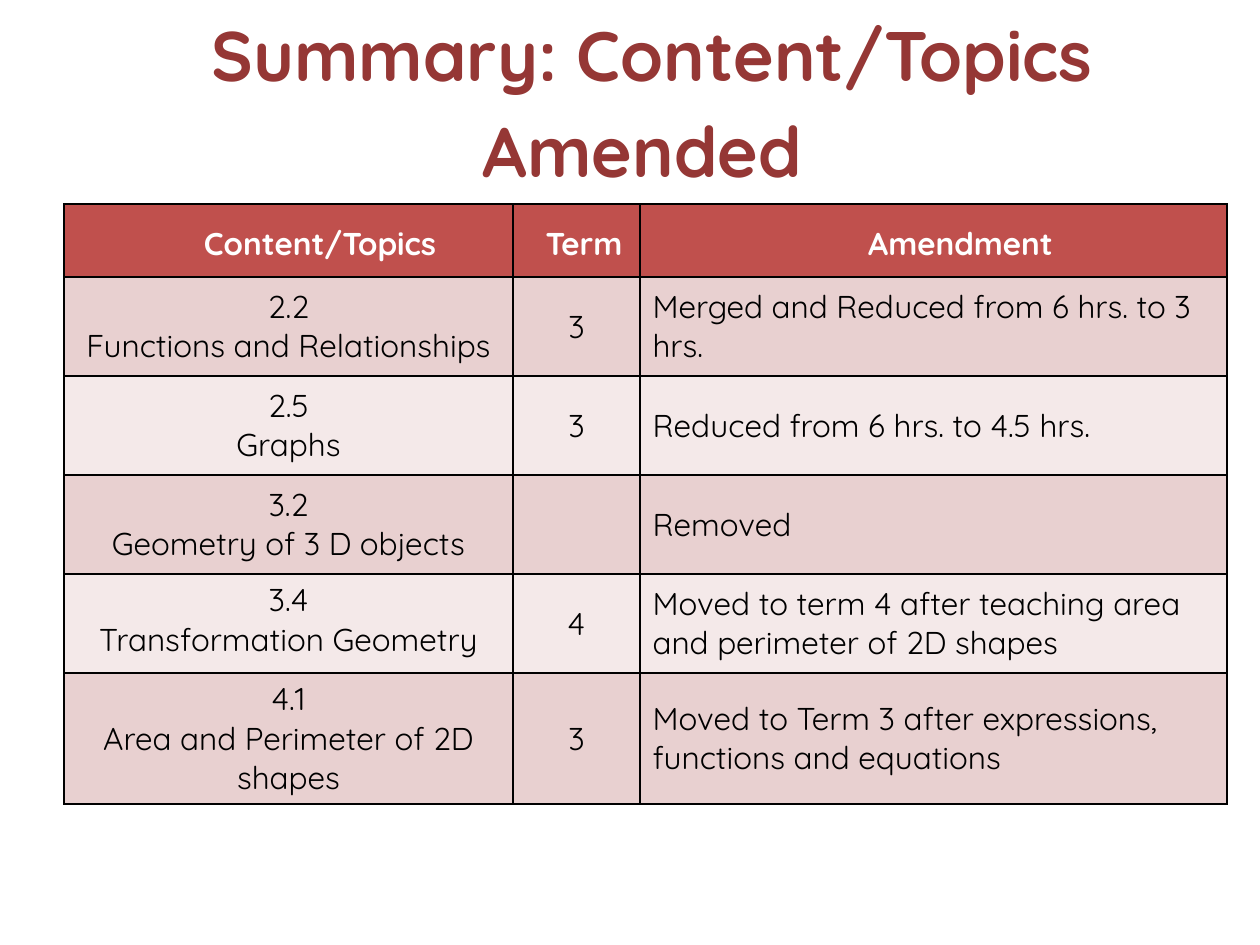
"""Build a slide with a table of amended mathematics content and topics."""
import dataclasses
import typing

import pptx
import pptx.dml.color
import pptx.enum.text
import pptx.oxml
import pptx.oxml.ns
import pptx.util

RGBColor = pptx.dml.color.RGBColor
Align = pptx.enum.text.PP_ALIGN
Anchor = pptx.enum.text.MSO_ANCHOR

PX_PER_INCH = 126
FONT = "Quicksand"
MAROON = RGBColor(0x95, 0x37, 0x35)
RED = RGBColor(0xC0, 0x50, 0x4D)
ROSE = RGBColor(0xE8, 0xD0, 0xD0)
BLUSH = RGBColor(0xF4, 0xE9, 0xE9)
BLACK = RGBColor(0, 0, 0)
WHITE = RGBColor(0xFF, 0xFF, 0xFF)

HEADINGS = ("Content/Topics", "Term", "Amendment ")
HEADING_INDENTS = (63, 15, 63)
COLUMN_WIDTHS = (449, 127, 587)
HEADER_HEIGHT = 73
ROW_HEIGHT = 99
COLUMN_ALIGNMENTS = (Align.CENTER, Align.CENTER, Align.LEFT)


@dataclasses.dataclass(frozen=True)
class Topic:
    number: str
    name: str
    term: str
    amendment: str
    anchor: Anchor = Anchor.MIDDLE


TOPICS = (
    Topic("2.2", "Functions and Relationships", "3",
          "Merged and Reduced from 6 hrs. to 3 hrs."),
    Topic("2.5", "Graphs", "3", "Reduced from 6 hrs. to 4.5 hrs."),
    Topic("3.2", "Geometry of 3 D objects", "", "Removed"),
    Topic("3.4", "Transformation Geometry", "4",
          "Moved to term 4 after teaching area and perimeter of 2D shapes", Anchor.TOP),
    Topic("4.1", "Area and Perimeter of 2D shapes", "3",
          "Moved to Term 3 after expressions, functions and equations"),
)


def px(length: int) -> int:
    return pptx.util.Emu(round(length * 914400 / PX_PER_INCH))


def apply(target: typing.Any, values: dict[str, typing.Any]) -> None:
    for name, value in values.items():
        setattr(target, name, value)


def write(frame: typing.Any, text: str, size: int, color: RGBColor, bold: bool,
          layout: dict[str, typing.Any], indent: int = 0) -> None:
    frame.text = text
    for para in frame.paragraphs:
        apply(para, layout)
        properties = para._p.get_or_add_pPr()
        properties.set("marL", str(px(indent)))
        properties.set("indent", "0")
        for font in (para.font, *(span.font for span in para.runs)):
            apply(font, {"name": FONT, "size": pptx.util.Pt(size), "bold": bold})
            font.color.rgb = color


def style_cell(cell: typing.Any, fill: RGBColor, values: dict[str, typing.Any]) -> None:
    apply(cell, values)
    cell.fill.solid()
    cell.fill.fore_color.rgb = fill
    properties = cell._tc.get_or_add_tcPr()
    for position, side in enumerate(("lnL", "lnR", "lnT", "lnB")):
        border = pptx.oxml.parse_xml(
            f'<a:{side} {pptx.oxml.ns.nsdecls("a")} w="{pptx.util.Pt(1)}">'
            f'<a:solidFill><a:srgbClr val="{BLACK}"/></a:solidFill></a:{side}>')
        properties.insert(position, border)


def heading_layout(before: int) -> dict[str, typing.Any]:
    return {"alignment": Align.CENTER, "line_spacing": 1.15,
            "space_before": pptx.util.Pt(before), "space_after": pptx.util.Pt(6)}


def add_title(page: typing.Any) -> None:
    title = page.shapes.title
    apply(title, {"left": px(44), "top": px(16), "width": px(1153), "height": px(158)})
    write(title.text_frame, "Summary: Content/Topics Amended ", 40, MAROON, True,
          heading_layout(0), 63)
    apply(title.text_frame, {"vertical_anchor": Anchor.MIDDLE, "word_wrap": True,
                             "auto_size": pptx.enum.text.MSO_AUTO_SIZE.NONE})


def add_topics_table(page: typing.Any) -> None:
    heights = (HEADER_HEIGHT, *(ROW_HEIGHT for _ in TOPICS))
    table = page.shapes.add_table(len(heights), len(COLUMN_WIDTHS), px(64), px(204),
                                  px(sum(COLUMN_WIDTHS)), px(sum(heights))).table
    table.horz_banding = False
    for column, width in zip(table.columns, COLUMN_WIDTHS):
        column.width = px(width)
    for row, height in zip(table.rows, heights):
        row.height = px(height)

    header_format = {"vertical_anchor": Anchor.MIDDLE, "margin_left": px(9),
                     "margin_right": px(9), "margin_top": 0, "margin_bottom": 0}
    for cell, heading, indent in zip(table.rows[0].cells, HEADINGS, HEADING_INDENTS):
        write(cell.text_frame, heading, 18, WHITE, True, heading_layout(6), indent)
        style_cell(cell, RED, header_format)

    for index, topic in enumerate(TOPICS):
        fill = BLUSH if index % 2 else ROSE
        texts = (f"{topic.number}\n{topic.name}", topic.term, topic.amendment)
        anchors = (topic.anchor, Anchor.MIDDLE, Anchor.MIDDLE)
        cells = table.rows[index + 1].cells
        for cell, text, alignment, anchor in zip(cells, texts, COLUMN_ALIGNMENTS, anchors):
            write(cell.text_frame, text, 18, BLACK, False, {"alignment": alignment})
            style_cell(cell, fill, {"vertical_anchor": anchor})


def main() -> None:
    deck = pptx.Presentation()
    apply(deck, {"slide_width": px(1260), "slide_height": px(945)})
    page = deck.slides.add_slide(deck.slide_layouts[5])
    add_title(page)
    add_topics_table(page)
    deck.save("out.pptx")


if __name__ == "__main__":
    main()
